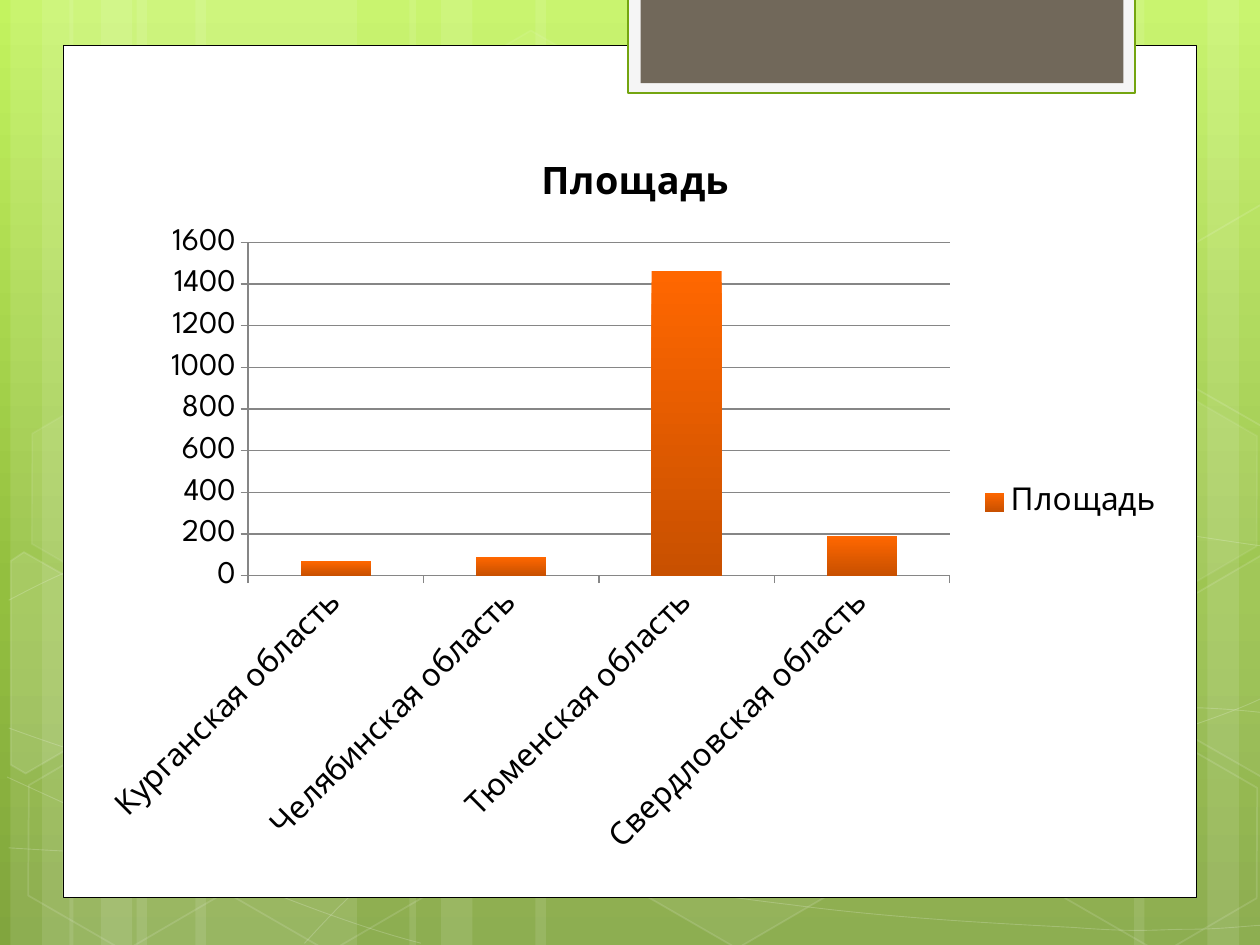
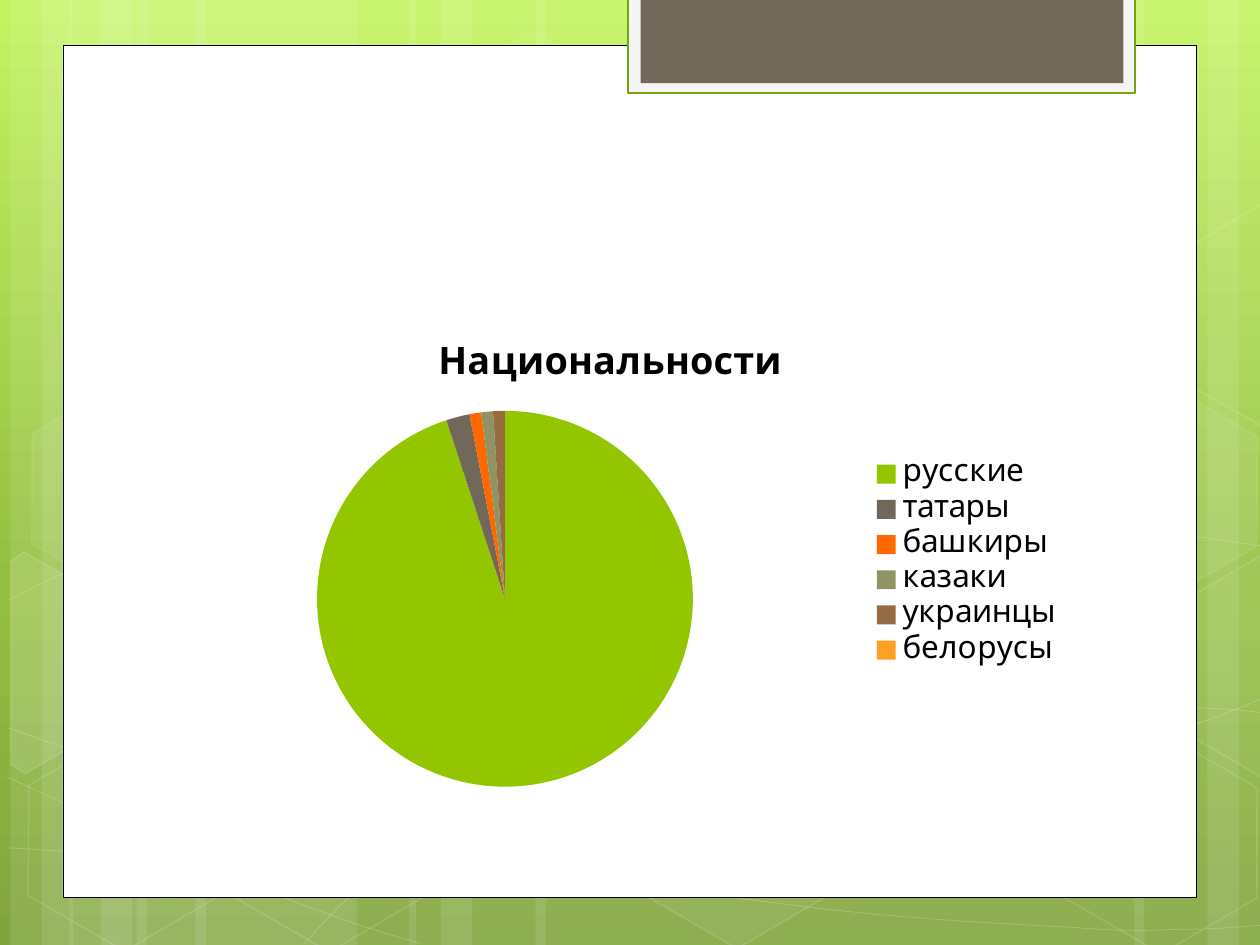
from dataclasses import dataclass
from math import cos, radians, sin

from lxml.etree import SubElement
from pptx import Presentation
from pptx.chart.chart import Chart
from pptx.chart.data import CategoryChartData
from pptx.dml.color import RGBColor
from pptx.enum.chart import XL_CHART_TYPE, XL_LEGEND_POSITION, XL_TICK_MARK
from pptx.enum.shapes import MSO_SHAPE
from pptx.oxml.ns import qn
from pptx.shapes.autoshape import Shape
from pptx.slide import Slide, SlideMaster
from pptx.util import Pt

FONT = "League Spartan"
TILT = 30
COLORS = {
    "white": "FFFFFF", "black": "000000", "tab": "F5F5F5", "tab_line": "74A510",
    "green": "94C600", "taupe": "71685A", "orange": "FF6700", "dark_orange": "C85000",
    "sage": "909465", "brown": "956B43", "amber": "FEA022", "grid": "868686",
    "sky": "C3F35F", "meadow": "93BF3F", "grass": "81A53E",
}
BACKGROUND_STOPS = [(0, "sky"), (62, "meadow"), (100, "grass")]
Points = list[tuple[float, float]]


@dataclass(frozen=True)
class Look:
    """Fill and line of a shape; opacities are percentages."""
    fill: str | None = None
    fill_opacity: int = 100
    line: str | None = None
    width: float = 1
    line_opacity: int = 100


@dataclass(frozen=True)
class Box:
    left: float
    top: float
    width: float
    height: float

    def emu(self) -> tuple[Pt, Pt, Pt, Pt]:
        return Pt(self.left), Pt(self.top), Pt(self.width), Pt(self.height)


@dataclass(frozen=True)
class ChartSlide:
    title: str
    kind: XL_CHART_TYPE
    box: Box
    values: dict[str, int]


# left, width
STRIPES = [
    (78, 126), (6, 36), (24, 60), (111.6, 126), (39.6, 36), (57.6, 60),
    (528, 126), (690, 36), (648, 60), (306, 222), (234, 36), (252, 60),
]
# start point, then Bézier segments of two control points and an end point
CURVES = [
    ((5, 484.5), [(44, 487, 83, 489, 137, 488), (191, 487, 258, 486, 330, 479),
                  (402, 472, 504, 458, 570, 444), (636, 431, 703, 409, 725, 397)]),
    ((5, 343), [(26, 332, 47, 321, 87, 310), (128, 299.5, 186.5, 284, 250, 279),
                (314, 274, 392, 273, 471, 279), (550, 284, 682, 307, 725, 312.5)]),
    ((4, 444), [(91, 484, 178, 523, 240.5, 539)]),
    ((5, 416), [(27, 424, 50, 432, 92, 443.5), (134, 454, 196.5, 472, 257, 484.5),
                (317, 497, 392, 510, 452, 517), (512, 525, 576, 528, 614, 530),
                (652, 533, 662, 531, 680, 531), (699, 531, 712, 529, 725, 528.5)]),
    ((174, 539), [(187, 525, 200, 510.5, 217.5, 497.5), (235, 484.5, 259, 470, 279, 460),
                  (299.5, 450, 312, 446, 338, 438.5), (364, 431, 412.5, 421, 438, 416),
                  (464, 411, 467, 411, 490, 409.5), (512, 407.5, 547, 405, 572, 404.5),
                  (597, 404, 638, 404.5, 638, 404.5), (654, 404.5, 670, 404.5, 686, 404.5),
                  (699, 405, 711, 406, 724, 407.5)]),
]
# left, top, fill opacity, line opacity
HEXAGONS = [
    (240.5, 26, 4, 8), (358, 424, 6, 12), (8, 425.5, 0, 12), (10, 224.5, 7, 8),
    (125, 426, 0, 12), (542, 326, 10, 12), (600.5, 427, 0, 12), (600.5, 226, 7, 8),
]
LEFT_CUT = [(6, 320.5), (13.5, 315.5), (69, 347), (68.5, 410.5), (14.5, 442), (6, 437)]
RIGHT_CUT = [(666.5, 349), (720.5, 317.5), (726.5, 321), (726.5, 441.5), (721.5, 444),
             (666.5, 412.5)]
UPPER_RIGHT_CUT = [(x, y - 200.5) for x, y in RIGHT_CUT]
# outline, centre of its tilted frame, fill opacity
CUT_HEXAGONS = [
    (LEFT_CUT, (26, 385), 10),
    (RIGHT_CUT, (709, 374.5), 4),
    (UPPER_RIGHT_CUT, (709, 174), 0),
]

PANELS = [
    (Box(36, 26, 648, 487), Look("white", line="black", width=0.5)),
    (Box(359, -1.5, 289.5, 54.5), Look("tab", line="tab_line", width=1.25)),
    (Box(366, -1.5, 276, 49), Look("taupe")),
]
AREA = ChartSlide(
    "Площадь", XL_CHART_TYPE.COLUMN_CLUSTERED, Box(54, 77.25, 618, 419.5),
    {"Курганская область": 70, "Челябинская область": 90,
     "Тюменская область": 1460, "Свердловская область": 190})
AREA_PLOT = Box(141.75, 138.5, 401, 190.5)
NATIONS = ChartSlide(
    "Национальности", XL_CHART_TYPE.PIE, Box(82, 183, 533.5, 276.5),
    {"русские": 94, "татары": 2, "башкиры": 1, "казаки": 1, "украинцы": 1, "белорусы": 0})
PIE_COLORS = ["green", "taupe", "orange", "sage", "brown", "amber"]


def rgb(name: str) -> RGBColor:
    return RGBColor.from_string(COLORS[name])


def set_opacity(sp: Shape, parent: str, percent: int) -> None:
    """Set the opacity of the solid fill found under parent ("" or "a:ln/")."""
    color = sp.element.spPr.find(f"{parent}a:solidFill/a:srgbClr", sp.element.nsmap)
    SubElement(color, qn("a:alpha"), val=str(percent * 1000))


def apply_look(sp: Shape, look: Look) -> None:
    sp.shadow.inherit = False
    if look.fill and look.fill_opacity:
        sp.fill.solid()
        sp.fill.fore_color.rgb = rgb(look.fill)
        if look.fill_opacity < 100:
            set_opacity(sp, "", look.fill_opacity)
    else:
        sp.fill.background()
    if look.line:
        sp.line.color.rgb = rgb(look.line)
        sp.line.width = Pt(look.width)
        if look.line_opacity < 100:
            set_opacity(sp, "a:ln/", look.line_opacity)
    else:
        sp.line.fill.background()


def add_preset(s: Slide, preset: MSO_SHAPE, box: Box, look: Look) -> Shape:
    sp = s.shapes.add_shape(preset, *box.emu())
    apply_look(sp, look)
    return sp


def add_outline(s: Slide, points: Points, look: Look, close: bool) -> Shape:
    start, *rest = [(Pt(x), Pt(y)) for x, y in points]
    builder = s.shapes.build_freeform(*start)
    builder.add_line_segments(rest, close=close)
    sp = builder.convert_to_shape()
    apply_look(sp, look)
    return sp


def add_curve(s: Slide, start: tuple[float, float], segments: list[tuple[float, ...]],
              look: Look) -> None:
    """Draw the control points as lines, then join each three into a Bézier segment."""
    controls = [seg[i:i + 2] for seg in segments for i in (0, 2, 4)]
    sp = add_outline(s, [start, *controls], look, close=False)
    outline = next(sp.element.iter(qn("a:path")))
    lines = outline.findall(qn("a:lnTo"))
    for i in range(0, len(lines), 3):
        bezier = SubElement(outline, qn("a:cubicBezTo"))
        for line in lines[i:i + 3]:
            bezier.append(line[0])
            outline.remove(line)


def untilt(points: Points, center: tuple[float, float]) -> Points:
    """Turn points back by the tilt that the shape's own rotation adds."""
    c, k = cos(radians(TILT)), sin(radians(TILT))
    cx, cy = center
    return [(cx + c * (x - cx) + k * (y - cy), cy - k * (x - cx) + c * (y - cy))
            for x, y in points]


def draw_decoration(s: Slide) -> None:
    for left, width in STRIPES:
        add_preset(s, MSO_SHAPE.RECTANGLE, Box(left, 0, width, 540), Look("white", 10))
    for start, segments in CURVES:
        add_curve(s, start, segments, Look(line="white", width=0.5, line_opacity=20))
    for left, top, fill_opacity, line_opacity in HEXAGONS:
        sp = add_preset(s, MSO_SHAPE.HEXAGON, Box(left, top, 126, 109.5),
                        Look("white", fill_opacity, "white", 1, line_opacity))
        sp.adjustments[0] = 0.285
        sp.rotation = TILT
    for points, center, fill_opacity in CUT_HEXAGONS:
        sp = add_outline(s, untilt(points, center),
                         Look("white", fill_opacity, "white", 1, 12), close=True)
        sp.rotation = TILT
    for box, look in PANELS:
        add_preset(s, MSO_SHAPE.RECTANGLE, box, look)


def move_to_master(s: Slide, master: SlideMaster) -> None:
    """Move all shapes of a slide to the master, where every slide shows them."""
    for number, sp in enumerate(list(s.shapes), start=101):
        sp.element.nvSpPr.cNvPr.id = number
        master.shapes.element.append(sp.element)


def set_background(master: SlideMaster) -> None:
    fill = master.background.fill
    fill.gradient()
    fill.gradient_angle = 270
    stops = next(master.element.iter(qn("a:gsLst")))
    for stop in list(stops):
        stops.remove(stop)
    for position, name in BACKGROUND_STOPS:
        stop = SubElement(stops, qn("a:gs"), pos=str(position * 1000))
        SubElement(stop, qn("a:srgbClr"), val=COLORS[name])


def add_chart(s: Slide, content: ChartSlide) -> Chart:
    data = CategoryChartData()
    data.categories = list(content.values)
    data.add_series(content.title, list(content.values.values()))
    chart = s.shapes.add_chart(content.kind, *content.box.emu(), data).chart
    chart.font.name, chart.font.size = FONT, Pt(18)
    chart.font.color.rgb = rgb("black")
    chart.has_title = True
    p = chart.chart_title.text_frame.paragraphs[0]
    p.text = content.title
    p.font.name, p.font.size, p.font.bold = FONT, Pt(21.6), True
    p.font.color.rgb = rgb("black")
    chart.has_legend = True
    chart.legend.position = XL_LEGEND_POSITION.RIGHT
    chart.legend.include_in_layout = False
    return chart


def place_plot(chart: Chart, outer: Box, plot: Box) -> None:
    """Fix the area inside the axes, given in slide coordinates."""
    area = next(chart.element.iter(qn("c:plotArea")))
    for old in area.findall(qn("c:layout")):
        area.remove(old)
    layout = SubElement(area, qn("c:layout"))
    area.insert(0, layout)
    manual = SubElement(layout, qn("c:manualLayout"))
    settings = {
        "layoutTarget": "inner", "xMode": "edge", "yMode": "edge",
        "x": (plot.left - outer.left) / outer.width,
        "y": (plot.top - outer.top) / outer.height,
        "w": plot.width / outer.width, "h": plot.height / outer.height,
    }
    for tag, value in settings.items():
        SubElement(manual, qn(f"c:{tag}"), val=str(value))


def style_columns(chart: Chart) -> None:
    plot = chart.plots[0]
    plot.vary_by_categories = False
    plot.gap_width = 150
    fill = plot.series[0].format.fill
    fill.gradient()
    fill.gradient_angle = 270
    for stop, name in zip(fill.gradient_stops, ("orange", "dark_orange")):
        stop.color.rgb = rgb(name)
    values, categories = chart.value_axis, chart.category_axis
    values.minimum_scale, values.maximum_scale, values.major_unit = 0, 1600, 200
    values.has_major_gridlines = True
    for part in (values, categories, values.major_gridlines):
        part.format.line.color.rgb = rgb("grid")
        part.format.line.width = Pt(0.75)
    for axis in (values, categories):
        axis.major_tick_mark = XL_TICK_MARK.OUTSIDE
        font = axis.tick_labels.font
        font.name, font.size = FONT, Pt(18)
        font.color.rgb = rgb("black")
    category_axis = next(chart.element.iter(qn("c:catAx")))
    next(category_axis.iter(qn("a:bodyPr"))).set("rot", str(-45 * 60000))


def style_pie(chart: Chart) -> None:
    plot = chart.plots[0]
    plot.vary_by_categories = True
    for i, name in enumerate(PIE_COLORS):
        fill = plot.series[0].points[i].format.fill
        fill.solid()
        fill.fore_color.rgb = rgb(name)


def main() -> None:
    prs = Presentation()
    prs.slide_width, prs.slide_height = Pt(720), Pt(540)
    area, nations = [prs.slides.add_slide(prs.slide_layouts[6]) for _ in range(2)]
    set_background(prs.slide_master)
    draw_decoration(area)
    move_to_master(area, prs.slide_master)
    area_chart = add_chart(area, AREA)
    style_columns(area_chart)
    place_plot(area_chart, AREA.box, AREA_PLOT)
    style_pie(add_chart(nations, NATIONS))
    prs.save("out.pptx")


if __name__ == "__main__":
    main()
